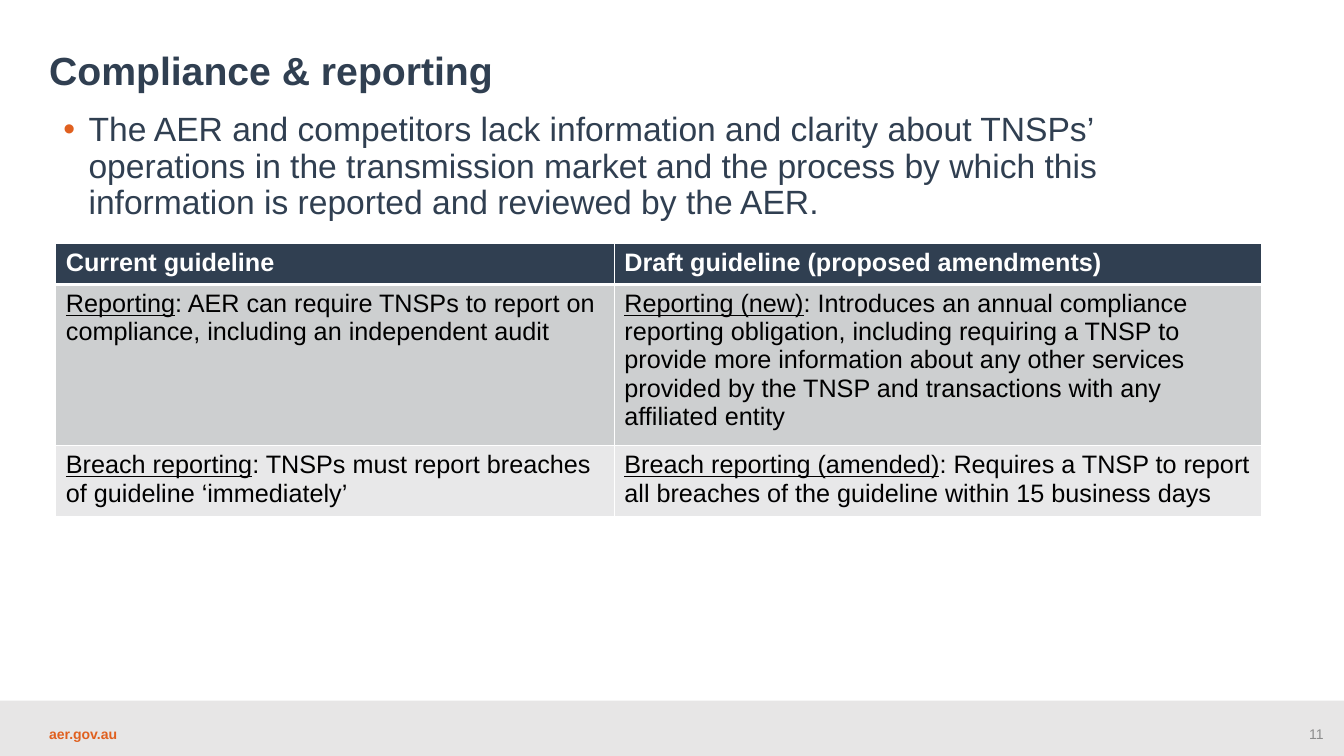
from lxml.etree import SubElement
from pptx import Presentation
from pptx.dml.color import RGBColor
from pptx.enum.shapes import MSO_SHAPE
from pptx.enum.text import MSO_ANCHOR, PP_ALIGN
from pptx.oxml.ns import qn
from pptx.util import Pt

NAVY = RGBColor(0x30, 0x3F, 0x51)
ORANGE = RGBColor(0xE0, 0x60, 0x1F)
GREY = RGBColor(0x8C, 0x8C, 0x8C)
FOOTER_GREY = RGBColor(0xE7, 0xE6, 0xE6)
DARK_BAND = RGBColor(0xCD, 0xCF, 0xD0)
LIGHT_BAND = RGBColor(0xE8, 0xE8, 0xE9)
WHITE = RGBColor(0xFF, 0xFF, 0xFF)
BLACK = RGBColor(0, 0, 0)

TITLE = "Compliance & reporting"
ISSUE = (
    "The AER and competitors lack information and clarity about TNSPs’ operations in the "
    "transmission market and the process by which this information is reported and reviewed by the AER."
)
HEADINGS = ["Current guideline", "Draft guideline (proposed amendments)"]
GUIDELINES = [
    [
        ("Reporting", ": AER can require TNSPs to report on compliance, including an independent audit"),
        ("Reporting (new)", ": Introduces an annual compliance reporting obligation, including requiring "
         "a TNSP to provide more information about any other services provided by the TNSP and "
         "transactions with any affiliated entity"),
    ],
    [
        ("Breach reporting", ": TNSPs must report breaches of guideline ‘immediately’"),
        ("Breach reporting (amended)", ": Requires a TNSP to report all breaches of the guideline "
         "within 15 business days"),
    ],
]
WEBSITE = "aer.gov.au"
PAGE_NUMBER = "11"

PAGE_WIDTH, PAGE_HEIGHT = 960, 540
FOOTER_TOP = 500.4
TABLE_LEFT, TABLE_TOP = 39.9, 173.8
COLUMN_WIDTHS = [398.9, 462.2]
ROW_HEIGHTS = [29.5, 107.5, 47]
BANDS = [NAVY, DARK_BAND, LIGHT_BAND]


def write(frame, *texts, size, color, bold=False, underline_first=False,
          align=PP_ALIGN.LEFT, line=1.0, space=0):
    para = frame.paragraphs[0]
    para.alignment = align
    para.line_spacing = line
    para.space_before = para.space_after = Pt(space)
    for index, text in enumerate(texts):
        span = para.add_run()
        span.text = text
        span.font.name = "Arial"
        span.font.size = Pt(size)
        span.font.bold = bold
        span.font.underline = underline_first and index == 0
        span.font.color.rgb = color
    return para


def add_box(page, left, top, width, height, anchor):
    frame = page.shapes.add_textbox(Pt(left), Pt(top), Pt(width), Pt(height)).text_frame
    frame.word_wrap = True
    frame.vertical_anchor = anchor
    return frame


def add_bullet(para, color, indent):
    properties = para._p.get_or_add_pPr()
    properties.set("marL", str(Pt(indent)))
    properties.set("indent", str(-Pt(indent)))
    fill = SubElement(properties, qn("a:buClr"))
    SubElement(fill, qn("a:srgbClr"), val=str(color))
    SubElement(properties, qn("a:buFont"), typeface="Arial")
    SubElement(properties, qn("a:buChar"), char="•")


def style_cell(cell, row):
    properties = cell._tc.get_or_add_tcPr()
    widths = {"lnL": 1, "lnR": 1, "lnT": 3 if row == 1 else 1, "lnB": 3 if row == 0 else 1}
    for side, width in widths.items():
        border = SubElement(properties, qn("a:" + side), w=str(Pt(width)))
        fill = SubElement(border, qn("a:solidFill"))
        SubElement(fill, qn("a:srgbClr"), val=str(WHITE))
    cell.fill.solid()
    cell.fill.fore_color.rgb = BANDS[row]


def add_guideline_table(page):
    rows = [[(heading,) for heading in HEADINGS]] + GUIDELINES
    table = page.shapes.add_table(
        len(rows), len(HEADINGS), Pt(TABLE_LEFT), Pt(TABLE_TOP),
        Pt(sum(COLUMN_WIDTHS)), Pt(sum(ROW_HEIGHTS))).table
    for column, width in zip(table.columns, COLUMN_WIDTHS):
        column.width = Pt(width)
    for row, texts in enumerate(rows):
        table.rows[row].height = Pt(ROW_HEIGHTS[row])
        header = row == 0
        for column, spans in enumerate(texts):
            cell = table.cell(row, column)
            style_cell(cell, row)
            write(cell.text_frame, *spans, size=18, color=WHITE if header else BLACK,
                  bold=header, underline_first=not header)


def main():
    deck = Presentation()
    deck.slide_width, deck.slide_height = Pt(PAGE_WIDTH), Pt(PAGE_HEIGHT)
    page = deck.slides.add_slide(deck.slide_layouts[6])

    footer = page.shapes.add_shape(
        MSO_SHAPE.RECTANGLE, 0, Pt(FOOTER_TOP), Pt(PAGE_WIDTH), Pt(PAGE_HEIGHT - FOOTER_TOP))
    footer.shadow.inherit = False
    footer.fill.solid()
    footer.fill.fore_color.rgb = FOOTER_GREY
    footer.line.fill.background()

    website = add_box(page, 28, 514, 88, 20, MSO_ANCHOR.MIDDLE)
    write(website, WEBSITE, size=10, color=ORANGE, bold=True)
    number = add_box(page, 775, 514, 177.6, 20, MSO_ANCHOR.MIDDLE)
    write(number, PAGE_NUMBER, size=10, color=GREY, align=PP_ALIGN.RIGHT)

    title = add_box(page, 28, 16.6, 843, 54, MSO_ANCHOR.BOTTOM)
    write(title, TITLE, size=28, color=NAVY, bold=True, line=0.9)
    issue = add_box(page, 38.2, 77, 845.3, 388, MSO_ANCHOR.TOP)
    add_bullet(write(issue, ISSUE, size=24, color=NAVY, line=0.9, space=4), ORANGE, 18)

    add_guideline_table(page)
    deck.save("out.pptx")


if __name__ == "__main__":
    main()
